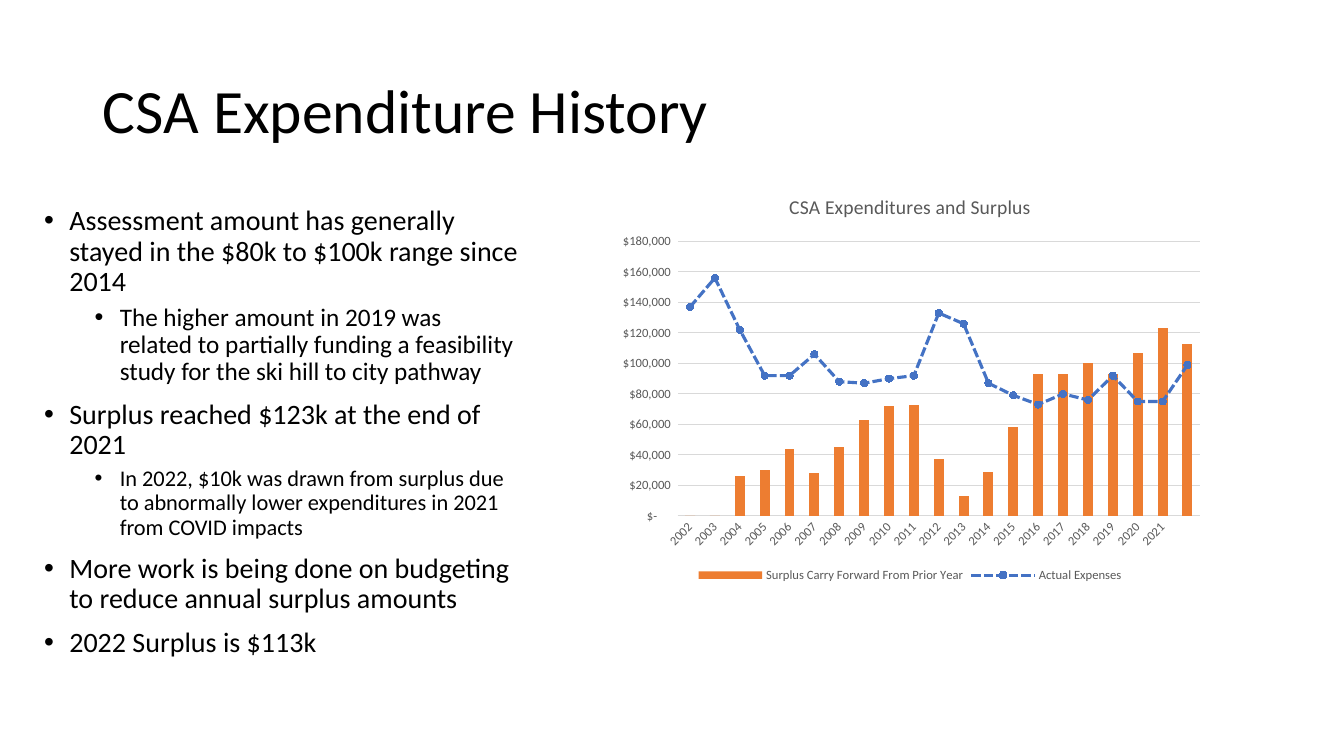
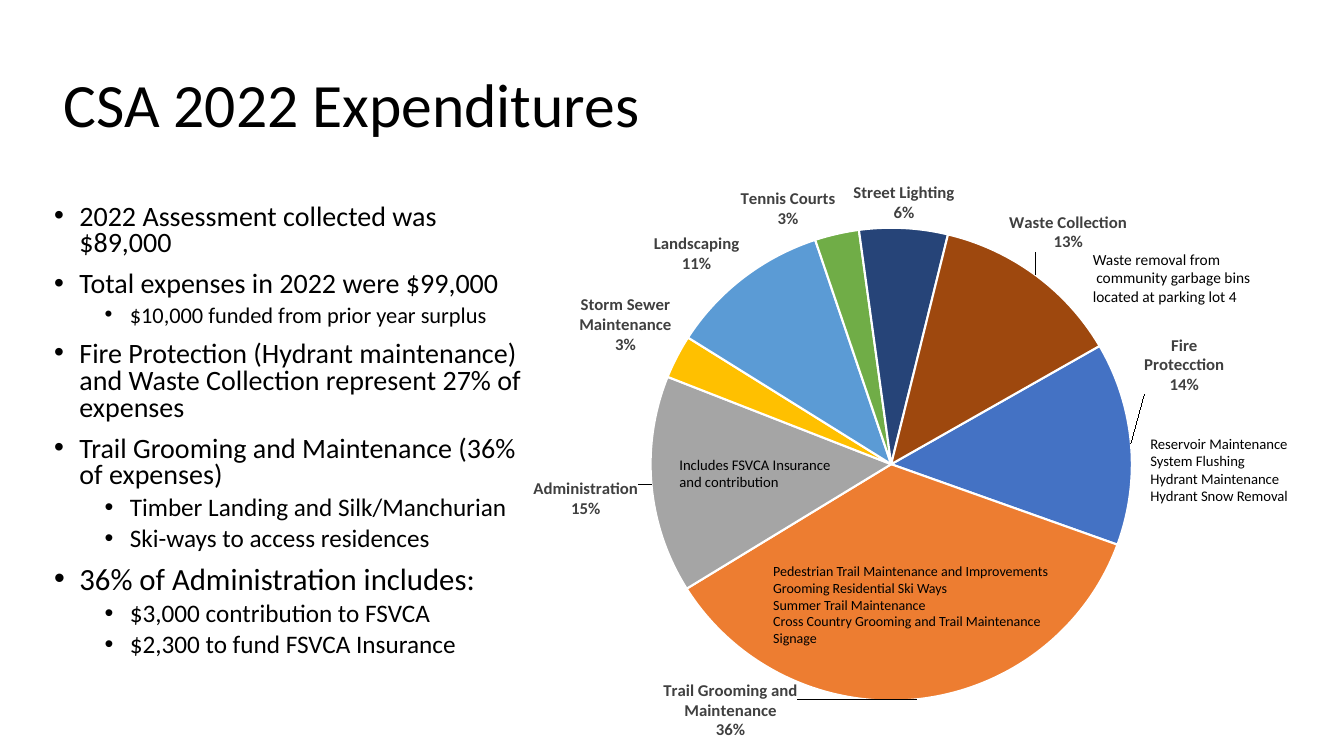
import copy

import pptx
import pptx.chart.data
import pptx.dml.color
import pptx.enum.chart
import pptx.enum.dml
import pptx.enum.text
import pptx.oxml
import pptx.oxml.ns
import pptx.util

# Shared look
FACE = "Calibri"
HUES = {
    "ink": "000000", "grey": "595959", "label": "404040", "rule": "D9D9D9",
    "edge": "FFFFFF", "blue": "4472C4", "orange": "ED7D31", "silver": "A5A5A5",
    "gold": "FFC000", "sky": "5B9BD5", "green": "70AD47", "navy": "264478",
    "brown": "9E480E",
}
RGB = {name: pptx.dml.color.RGBColor.from_string(code) for name, code in HUES.items()}
NS = pptx.oxml.ns.nsdecls("c")
qn = pptx.oxml.ns.qn
kinds = pptx.enum.chart

deck = pptx.Presentation()
deck.slide_width = pptx.util.Inches(13.33)
deck.slide_height = pptx.util.Inches(7.5)


def box(left, top, width, height):
    """Turn percentages of the slide's size into lengths."""
    wide, high = deck.slide_width / 100, deck.slide_height / 100
    return int(left * wide), int(top * high), int(width * wide), int(height * high)


def ink(font, size, hue="ink", bold=False):
    font.name = FACE
    font.size = pptx.util.Pt(size)
    font.bold = bold
    font.color.rgb = RGB[hue]


# Titles and bullets: each item is level, size, text
pages = [
    {
        "title": "CSA Expenditure History",
        "head": (6.9, 5.33, 86.27, 19.33),
        "body": (2.55, 26.67, 36.83, 63.47),
        "lead": 0.9,
        "items": [
            (0, 20, "Assessment amount has generally stayed in the $80k to $100k range since 2014"),
            (1, 18, "The higher amount in 2019 was related to partially funding "
                    "a feasibility study for the ski hill to city pathway"),
            (0, 20, "Surplus reached $123k at the end of 2021"),
            (1, 16, "In 2022, $10k was drawn from surplus due to abnormally lower "
                    "expenditures in 2021 from COVID impacts"),
            (0, 20, "More work is being done on budgeting to reduce annual surplus amounts"),
            (0, 20, "2022 Surplus is $113k"),
        ],
    },
    {
        "title": "CSA 2022 Expenditures",
        "head": (3.98, 4.67, 46.36, 19.07),
        "body": (3.3, 26.4, 36.83, 63.47),
        "lead": 0.8,
        "items": [
            (0, 20, "2022 Assessment collected was $89,000"),
            (0, 20, "Total expenses in 2022 were $99,000"),
            (1, 16, "$10,000 funded from prior year surplus"),
            (0, 20, "Fire Protection (Hydrant maintenance) and Waste Collection "
                    "represent 27% of expenses"),
            (0, 20, "Trail Grooming and Maintenance (36% of expenses)"),
            (1, 18, "Timber Landing and Silk/Manchurian"),
            (1, 18, "Ski-ways to access residences"),
            (0, 22, "36% of Administration includes:"),
            (1, 18, "$3,000 contribution to FSVCA"),
            (1, 18, "$2,300 to fund FSVCA Insurance"),
        ],
    },
]

slides = []
for page in pages:
    slide = deck.slides.add_slide(deck.slide_layouts[5])
    slides.append(slide)

    title = slide.shapes.title
    title.left, title.top, title.width, title.height = box(*page["head"])
    frame = title.text_frame
    frame.text = page["title"]
    frame.auto_size = pptx.enum.text.MSO_AUTO_SIZE.NONE
    frame.vertical_anchor = pptx.enum.text.MSO_ANCHOR.MIDDLE
    para = frame.paragraphs[0]
    para.alignment = pptx.enum.text.PP_ALIGN.LEFT
    para.line_spacing = 0.9
    ink(para.runs[0].font, 44)

    frame = slide.shapes.add_textbox(*box(*page["body"])).text_frame
    frame.word_wrap = True
    frame.text = "\n".join(text for _, _, text in page["items"])
    for para, (level, size, _) in zip(frame.paragraphs, page["items"]):
        para.level = level
        para.line_spacing = page["lead"]
        para.space_before = pptx.util.Pt(5 if level else 10)
        ink(para.runs[0].font, size)
        props = para._p.get_or_add_pPr()
        props.set("marL", str(pptx.util.Inches(0.25 + 0.5 * level)))
        props.set("indent", str(pptx.util.Inches(-0.25)))
        for tag, key, value in (("buFont", "typeface", "Arial"), ("buChar", "char", "•")):
            props.append(pptx.oxml.parse_xml(
                f'<a:{tag} {pptx.oxml.ns.nsdecls("a")} {key}="{value}"/>'))

# Surplus columns and expense line
data = pptx.chart.data.CategoryChartData()
data.categories = [str(year) for year in range(2002, 2022)]
thousands = {
    "Surplus Carry Forward From Prior Year": [
        0, 0, 26, 30, 44, 28, 45, 63, 72, 73, 37, 13, 29, 58, 93, 93, 100, 93, 107, 123, 113],
    "Actual Expenses": [
        137, 156, 122, 92, 92, 106, 88, 87, 90, 92, 133, 126, 87, 79, 73, 80, 76, 92, 75, 75, 99],
}
for name, sums in thousands.items():
    data.add_series(name, [1000 * num for num in sums])
chart = slides[0].shapes.add_chart(
    kinds.XL_CHART_TYPE.COLUMN_CLUSTERED, *box(45.24, 23.33, 44.94, 54.27), data).chart
ink(chart.font, 10)
chart.has_title = True
chart.chart_title.include_in_layout = False
chart.chart_title.text_frame.text = "CSA Expenditures and Surplus"
ink(chart.chart_title.text_frame.paragraphs[0].runs[0].font, 14, "grey")
chart.has_legend = True
chart.legend.position = kinds.XL_LEGEND_POSITION.BOTTOM
chart.legend.include_in_layout = False
ink(chart.legend.font, 9, "grey")

for axis in (chart.category_axis, chart.value_axis):
    axis.major_tick_mark = axis.minor_tick_mark = kinds.XL_TICK_MARK.NONE
    ink(axis.tick_labels.font, 9, "grey")
years, money = chart.category_axis, chart.value_axis
years._element.find(qn("c:txPr")).find(qn("a:bodyPr")).set("rot", "-2700000")
money.minimum_scale, money.maximum_scale, money.major_unit = 0, 180000, 20000
money.tick_labels.number_format = r'_("$"* #,##0_);_("$"* \(#,##0\);_("$"* "-"??_);_(@_)'
money.tick_labels.number_format_is_linked = False
money.format.line.fill.background()
for line in (years.format.line, money.major_gridlines.format.line):
    line.color.rgb = RGB["rule"]
    line.width = pptx.util.Pt(0.75)

bars = chart.plots[0]
bars.gap_width = 150
bars.vary_by_categories = False
bars.series[0].format.fill.solid()
bars.series[0].format.fill.fore_color.rgb = RGB["orange"]

# Move the second series to a line plot on the same axes
group = bars._element
track = group.findall(qn("c:ser"))[1]
for flag in track.findall(qn("c:invertIfNegative")):
    track.remove(flag)
plot = pptx.oxml.parse_xml(
    f'<c:lineChart {NS}><c:grouping val="stacked"/><c:varyColors val="0"/>'
    '<c:marker val="1"/></c:lineChart>')
plot.insert(2, track)
for axis in group.findall(qn("c:axId")):
    plot.append(copy.deepcopy(axis))
group.addnext(plot)

costs = chart.plots[1].series[0]
costs.smooth = False
costs.format.line.color.rgb = RGB["blue"]
costs.format.line.width = pptx.util.Pt(2.25)
costs.format.line.dash_style = pptx.enum.dml.MSO_LINE.SQUARE_DOT
costs.marker.style = kinds.XL_MARKER_STYLE.CIRCLE
costs.marker.size = 5
costs.marker.format.fill.solid()
costs.marker.format.fill.fore_color.rgb = RGB["blue"]
costs.marker.format.line.color.rgb = RGB["blue"]

# Pie of expenses: name, percent, colour, label shift
parts = [
    ("Fire Protecction", 14, "blue", (0.01, -0.08)),
    ("Trail Grooming and Maintenance", 36, "orange", (-0.34, -0.04)),
    ("Administration", 15, "silver", (-0.01, -0.01)),
    ("Storm Sewer Maintenance", 3, "gold", None),
    ("Landscaping", 11, "sky", None),
    ("Tennis Courts", 3, "green", None),
    ("Street Lighting", 6, "navy", None),
    ("Waste Collection", 13, "brown", (-0.04, -0.03)),
]
data = pptx.chart.data.CategoryChartData()
data.categories = [part[0] for part in parts]
data.add_series("Series 1", [part[1] for part in parts])
chart = slides[1].shapes.add_chart(
    kinds.XL_CHART_TYPE.PIE, *box(37.43, 19.47, 55.44, 81.6), data).chart
ink(chart.font, 10)
chart.has_title = False
chart.has_legend = False
pie = chart.plots[0]
pie._element.append(pptx.oxml.parse_xml(f'<c:firstSliceAng {NS} val="60"/>'))
area = pie._element.getparent()
for old in area.findall(qn("c:layout")):
    area.remove(old)
area.insert(0, pptx.oxml.parse_xml(
    f'<c:layout {NS}><c:manualLayout><c:layoutTarget val="inner"/>'
    '<c:xMode val="edge"/><c:yMode val="edge"/><c:x val="0.167"/><c:y val="0.133"/>'
    '<c:w val="0.708"/><c:h val="0.78"/></c:manualLayout></c:layout>'))

labels = pie.series[0].data_labels
labels.show_value = False
labels.show_category_name = labels.show_percentage = True
labels.number_format = "0%"
labels.number_format_is_linked = False
labels.position = kinds.XL_LABEL_POSITION.OUTSIDE_END
ink(labels.font, 12, "label", True)
root = labels._element
gap = pptx.oxml.parse_xml(f"<c:separator {NS}>\n</c:separator>")
root.find(qn("c:showPercent")).addnext(gap)
bubble = root.find(qn("c:showBubbleSize"))
if bubble is not None:
    bubble.addnext(gap)
shared = [node for node in root if node.tag != qn("c:showLeaderLines")]
spot = 0
for rank, (_, _, hue, shift) in enumerate(parts):
    slice = pie.series[0].points[rank].format
    slice.fill.solid()
    slice.fill.fore_color.rgb = RGB[hue]
    slice.line.color.rgb = RGB["edge"]
    slice.line.width = pptx.util.Pt(1.5)
    if shift:
        label = pptx.oxml.parse_xml(
            f'<c:dLbl {NS}><c:idx val="{rank}"/><c:layout><c:manualLayout>'
            f'<c:x val="{shift[0]}"/><c:y val="{shift[1]}"/>'
            '</c:manualLayout></c:layout></c:dLbl>')
        label.extend(copy.deepcopy(node) for node in shared)
        root.insert(spot, label)
        spot += 1

# Notes around the pie: place, size, lines
notes = [
    ((80.57, 32.4, 13.58, 11.2), 11,
     ["Waste removal from", " community garbage bins", "located at parking lot 4"]),
    ((56.79, 73.73, 22.36, 14.8), 10,
     ["Pedestrian Trail Maintenance and Improvements", "Grooming Residential Ski Ways",
      "Summer Trail Maintenance", "Cross Country Grooming and Trail Maintenance", "Signage"]),
    ((84.85, 56.8, 12, 10.8), 10.5,
     ["Reservoir Maintenance", "System Flushing", "Hydrant Maintenance",
      "Hydrant Snow Removal"]),
    ((49.81, 59.6, 12.98, 8.4), 10.5, ["Includes FSVCA Insurance", "and contribution"]),
]
for place, size, lines in notes:
    frame = slides[1].shapes.add_textbox(*box(*place)).text_frame
    frame.word_wrap = False
    frame.auto_size = pptx.enum.text.MSO_AUTO_SIZE.SHAPE_TO_FIT_TEXT
    frame.text = "\n".join(lines)
    for para in frame.paragraphs:
        ink(para.runs[0].font, size)

deck.save("out.pptx")
